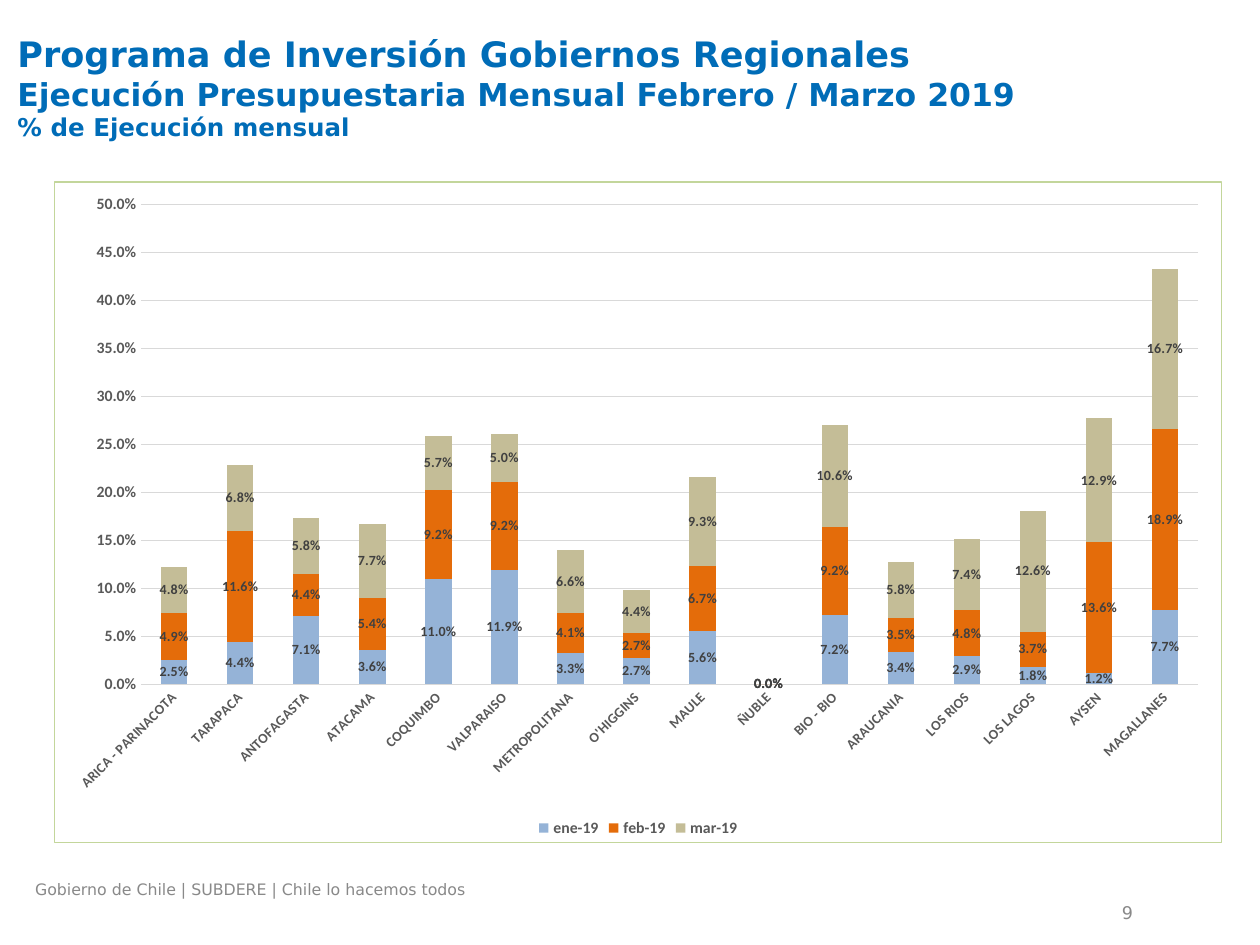
from lxml import etree
from pptx import Presentation
from pptx.chart.data import CategoryChartData
from pptx.dml.color import RGBColor
from pptx.enum.chart import XL_CHART_TYPE, XL_LABEL_POSITION, XL_LEGEND_POSITION, XL_TICK_MARK
from pptx.enum.text import MSO_ANCHOR, PP_ALIGN
from pptx.oxml import parse_xml
from pptx.oxml.ns import nsdecls, qn
from pptx.util import Inches, Pt

# Content
TITLE = [
    [("Programa de Inversión Gobiernos Regionales", "title"),
     ("Ejecución Presupuestaria Mensual Febrero / Marzo 2019", "subtitle")],
    [("% de Ejecución mensual", "measure")],
]
FOOTER = [[("Gobierno de Chile | SUBDERE | Chile lo hacemos todos", "footer")]]
PAGE_NUMBER = [[("9", "number")]]
MONTHS = ["ene-19", "feb-19", "mar-19"]
REGIONS = [  # region, then percent executed in each month
    ("ARICA - PARINACOTA", 2.5, 4.9, 4.8),
    ("TARAPACA", 4.4, 11.6, 6.8),
    ("ANTOFAGASTA", 7.1, 4.4, 5.8),
    ("ATACAMA", 3.6, 5.4, 7.7),
    ("COQUIMBO", 11.0, 9.2, 5.7),
    ("VALPARAISO", 11.9, 9.2, 5.0),
    ("METROPOLITANA", 3.3, 4.1, 6.6),
    ("O'HIGGINS", 2.7, 2.7, 4.4),
    ("MAULE", 5.6, 6.7, 9.3),
    ("ÑUBLE", 0, 0, 0),
    ("BIO - BIO", 7.2, 9.2, 10.6),
    ("ARAUCANIA", 3.4, 3.5, 5.8),
    ("LOS RIOS", 2.9, 4.8, 7.4),
    ("LOS LAGOS", 1.8, 3.7, 12.6),
    ("AYSEN", 1.2, 13.6, 12.9),
    ("MAGALLANES", 7.7, 18.9, 16.7),
]

THEME = {
    "font": "DejaVu Sans",
    "chart_font": "Calibri",
    "text": {  # size, colour, bold
        "title": (20, "006CB7", True),
        "subtitle": (18, "006CB7", True),
        "measure": (14, "006CB7", True),
        "footer": (9, "898989", False),
        "number": (10, "898989", False),
        "chart": (10, "000000", False),
        "regions": (8, "595959", True),
        "scale": (9, "595959", True),
        "values": (8, "404040", True),
    },
    "months": ["95B3D7", "E46C0A", "C4BD97"],
    "grid": "D9D9D9",
    "border": "C3D69B",
}
PERCENT = "0.0%"
PLOT_AREA = {"x": 0.074, "y": 0.034, "w": 0.906, "h": 0.727}  # share of the chart


def style_font(font, role, family=THEME["chart_font"]):
    size, colour, bold = THEME["text"][role]
    font.name, font.size, font.bold = family, Pt(size), bold
    font.color.rgb = RGBColor.from_string(colour)


def add_text(page, place, paragraphs, anchor=MSO_ANCHOR.MIDDLE, align=PP_ALIGN.LEFT):
    frame = page.shapes.add_textbox(*map(Inches, place)).text_frame
    frame.word_wrap = True
    frame.vertical_anchor = anchor
    for index, lines in enumerate(paragraphs):
        para = frame.add_paragraph() if index else frame.paragraphs[0]
        para.alignment = align
        for number, (text, role) in enumerate(lines):
            if number:
                para.add_line_break()
            span = para.add_run()
            span.text = text
            style_font(span.font, role, THEME["font"])


def style_axis(axis, role):
    axis.major_tick_mark = axis.minor_tick_mark = XL_TICK_MARK.NONE
    axis.format.line.fill.background()
    style_font(axis.tick_labels.font, role)


def place_plot(chart):
    plot_area = chart._chartSpace.chart.plotArea
    for old in plot_area.findall(qn("c:layout")):
        plot_area.remove(old)
    layout = etree.Element(qn("c:layout"))
    manual = etree.SubElement(layout, qn("c:manualLayout"))
    settings = {"layoutTarget": "inner", "xMode": "edge", "yMode": "edge", **PLOT_AREA}
    for tag, value in settings.items():
        etree.SubElement(manual, qn(f"c:{tag}")).set("val", str(value))
    plot_area.insert(0, layout)


def add_border(chart):
    chart._chartSpace.chart.addnext(parse_xml(
        f'<c:spPr {nsdecls("c", "a")}><a:noFill/><a:ln w="{Pt(0.75)}"><a:solidFill>'
        f'<a:srgbClr val="{THEME["border"]}"/></a:solidFill></a:ln></c:spPr>'))


def add_execution_chart(page, place):
    data = CategoryChartData(number_format=PERCENT)
    names, *columns = zip(*REGIONS)
    data.categories = names
    for month, percents in zip(MONTHS, columns):
        data.add_series(month, [round(percent / 100, 3) for percent in percents])
    chart = page.shapes.add_chart(
        XL_CHART_TYPE.COLUMN_STACKED, *map(Inches, place), data).chart
    style_font(chart.font, "chart")
    chart.has_title = False

    # Axes
    style_axis(chart.category_axis, "regions")
    rotation = chart.category_axis.tick_labels.font._element.getparent().getparent().getparent()
    rotation.find(qn("a:bodyPr")).set("rot", str(-45 * 60000))
    scale = chart.value_axis
    style_axis(scale, "scale")
    scale.minimum_scale, scale.maximum_scale, scale.major_unit = 0, 0.5, 0.05
    scale.tick_labels.number_format = PERCENT
    scale.tick_labels.number_format_is_linked = False
    grid = scale.major_gridlines.format.line
    grid.width = Pt(0.75)
    grid.color.rgb = RGBColor.from_string(THEME["grid"])

    # Legend
    chart.has_legend = True
    chart.legend.position = XL_LEGEND_POSITION.BOTTOM
    chart.legend.include_in_layout = False
    style_font(chart.legend.font, "scale")

    # Stacked months with their values
    plot = chart.plots[0]
    plot.gap_width, plot.overlap, plot.vary_by_categories = 150, 100, False
    for series, colour in zip(plot.series, THEME["months"]):
        series.format.fill.solid()
        series.format.fill.fore_color.rgb = RGBColor.from_string(colour)
        labels = series.data_labels
        labels.show_value = True
        labels.number_format = PERCENT
        labels.number_format_is_linked = False
        labels.position = XL_LABEL_POSITION.CENTER
        style_font(labels.font, "values")

    place_plot(chart)
    add_border(chart)


def main():
    deck = Presentation()
    deck.slide_width, deck.slide_height = Inches(10), Inches(7.5)
    page = deck.slides.add_slide(deck.slide_layouts[6])
    add_text(page, (6.76, 7.14, 2.33, 0.21), PAGE_NUMBER, align=PP_ALIGN.RIGHT)
    add_text(page, (0.04, 0.21, 8.97, 1.25), TITLE, anchor=MSO_ANCHOR.TOP)
    add_execution_chart(page, (0.43, 1.44, 9.27, 5.25))
    add_text(page, (0.18, 6.92, 6.48, 0.27), FOOTER)
    deck.save("out.pptx")


if __name__ == "__main__":
    main()
